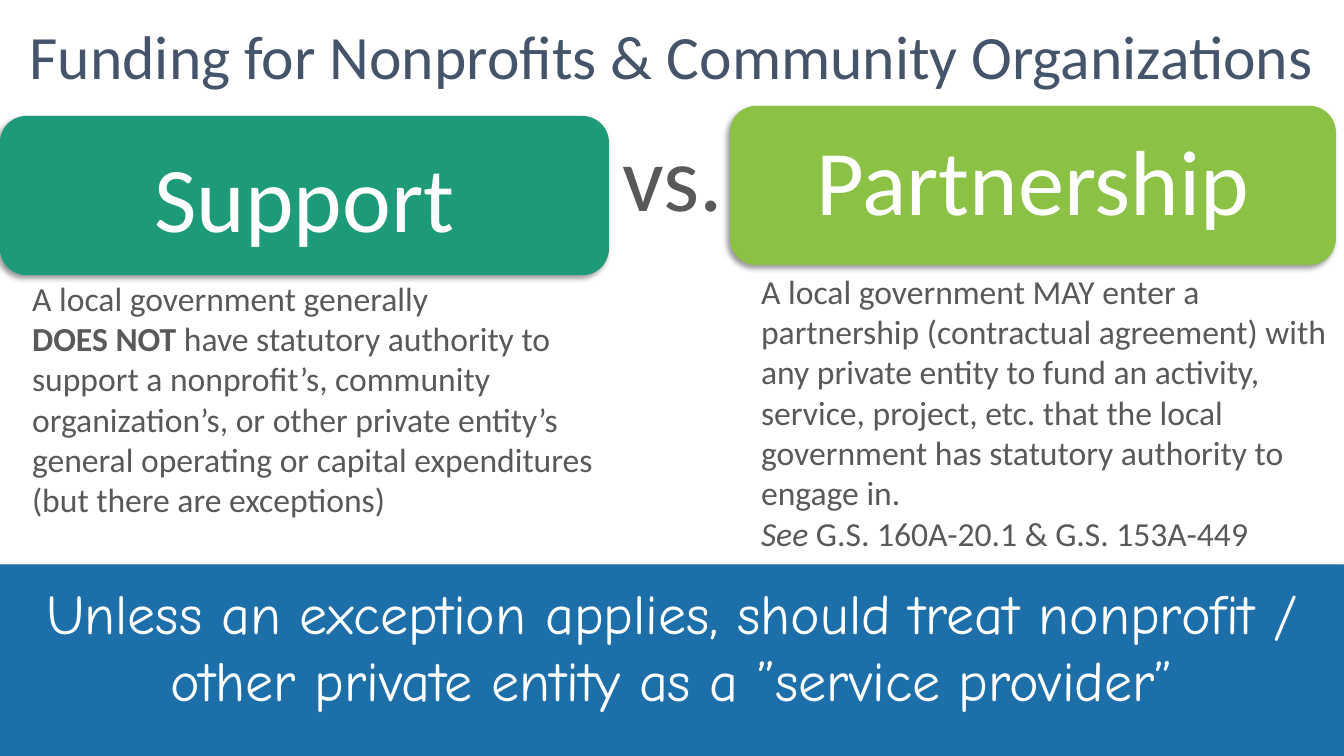
from lxml import etree
from pptx import Presentation
from pptx.dml.color import RGBColor
from pptx.enum.shapes import MSO_SHAPE as Shape
from pptx.enum.text import MSO_ANCHOR as Anchor, PP_ALIGN as Align
from pptx.oxml.ns import qn
from pptx.util import Inches, Pt

COLORS = {
    "white": "FFFFFF",
    "text": "595959",
    "title": "44546A",
    "support": "1D9A78",
    "partnership": "8BC145",
    "banner": "1D6FA9",
    "shadow": "000000",
}


class SlideBuilder:
    body_font = "Calibri"
    banner_font = "Comic Neue"

    def __init__(self, presentation):
        self.slide = presentation.slides.add_slide(presentation.slide_layouts[5])

    def fill_text(self, shape, paragraphs, size, color, align=Align.LEFT, font=body_font):
        """Fill a shape; each paragraph is a list of (text, style) pairs, style being '', 'bold' or 'italic'."""
        frame = shape.text_frame
        frame.word_wrap = True
        frame.vertical_anchor = Anchor.MIDDLE
        for index, parts in enumerate(paragraphs):
            paragraph = frame.paragraphs[0] if index == 0 else frame.add_paragraph()
            paragraph.alignment = align
            for text, style in parts:
                run = paragraph.add_run()
                run.text = text
                run.font.name = font
                run.font.size = Pt(size)
                run.font.bold = style == "bold"
                run.font.italic = style == "italic"
                run.font.color.rgb = RGBColor.from_string(COLORS[color])

    def title(self, text, left, top, width, height):
        title = self.slide.shapes.title
        title.left, title.top = Inches(left), Inches(top)
        title.width, title.height = Inches(width), Inches(height)
        self.fill_text(title, [[(text, "")]], 44, "title", Align.CENTER)

    def panel(self, kind, color, left, top, width, height):
        """Add a filled shape with a soft shadow towards the lower left."""
        panel = self.slide.shapes.add_shape(
            kind, Inches(left), Inches(top), Inches(width), Inches(height))
        panel.fill.solid()
        panel.fill.fore_color.rgb = RGBColor.from_string(COLORS[color])
        panel.line.fill.background()
        panel.shadow.inherit = False
        effects = panel.element.spPr.find(qn("a:effectLst"))
        shadow = etree.SubElement(
            effects, qn("a:outerShdw"), blurRad=str(Pt(4)), dist=str(Pt(3)),
            dir=str(135 * 60000), algn="tr", rotWithShape="0")
        tint = etree.SubElement(shadow, qn("a:srgbClr"), val=COLORS["shadow"])
        etree.SubElement(tint, qn("a:alpha"), val="40000")
        return panel

    def heading(self, text, color, left, top, width, height):
        heading = self.panel(Shape.ROUNDED_RECTANGLE, color, left, top, width, height)
        self.fill_text(heading, [[(text, "")]], 66, "white", Align.CENTER)
        return heading

    def text_box(self, paragraphs, left, top, width, height, size=24, color="text", **style):
        box = self.slide.shapes.add_textbox(
            Inches(left), Inches(top), Inches(width), Inches(height))
        self.fill_text(box, paragraphs, size, color, **style)
        return box


def main():
    presentation = Presentation()
    presentation.slide_width, presentation.slide_height = Inches(13.33), Inches(7.5)
    builder = SlideBuilder(presentation)

    builder.title("Funding for Nonprofits & Community Organizations", 0, 0.02, 13.33, 1.05)
    builder.panel(Shape.RECTANGLE, "banner", 0, 5.6, 13.33, 1.9)
    builder.heading("Support", "support", 0, 1.15, 6.04, 1.58)
    partnership = builder.heading("Partnership", "partnership", 7.24, 1.05, 6.01, 1.58)
    partnership_line = partnership.text_frame.paragraphs[0]
    partnership_line.line_spacing = 0.9
    partnership_line.space_before = Pt(10)
    builder.text_box([[("vs.", "")]], 5.55, 0.94, 2.24, 1.58, size=66, align=Align.CENTER)

    builder.text_box([
        [("A local government generally", "")],
        [("DOES NOT", "bold"),
         (" have statutory authority to support a nonprofit’s, community organization’s, "
          "or other private entity’s general operating or capital expenditures "
          "(but there are exceptions)", "")],
    ], 0.22, 2.89, 6.04, 2.13)
    partnership_text = builder.text_box([
        [("A local government MAY enter a partnership (contractual agreement) with any "
          "private entity to fund an activity, service, project, etc. that the local "
          "government has statutory authority to engage in.", "")],
        [("See", "italic"), (" G.S. 160A-20.1 & G.S. 153A-449", "")],
    ], 7.45, 3.21, 5.85, 2.5)
    partnership_text.text_frame.margin_bottom = Inches(0.8)

    builder.text_box(
        [[("Unless an exception applies, should treat nonprofit / "
           "other private entity as a ”service provider”", "")]],
        0.08, 4.58, 13.17, 3.65, size=40, color="white",
        align=Align.CENTER, font=builder.banner_font)

    presentation.save("out.pptx")


if __name__ == "__main__":
    main()
